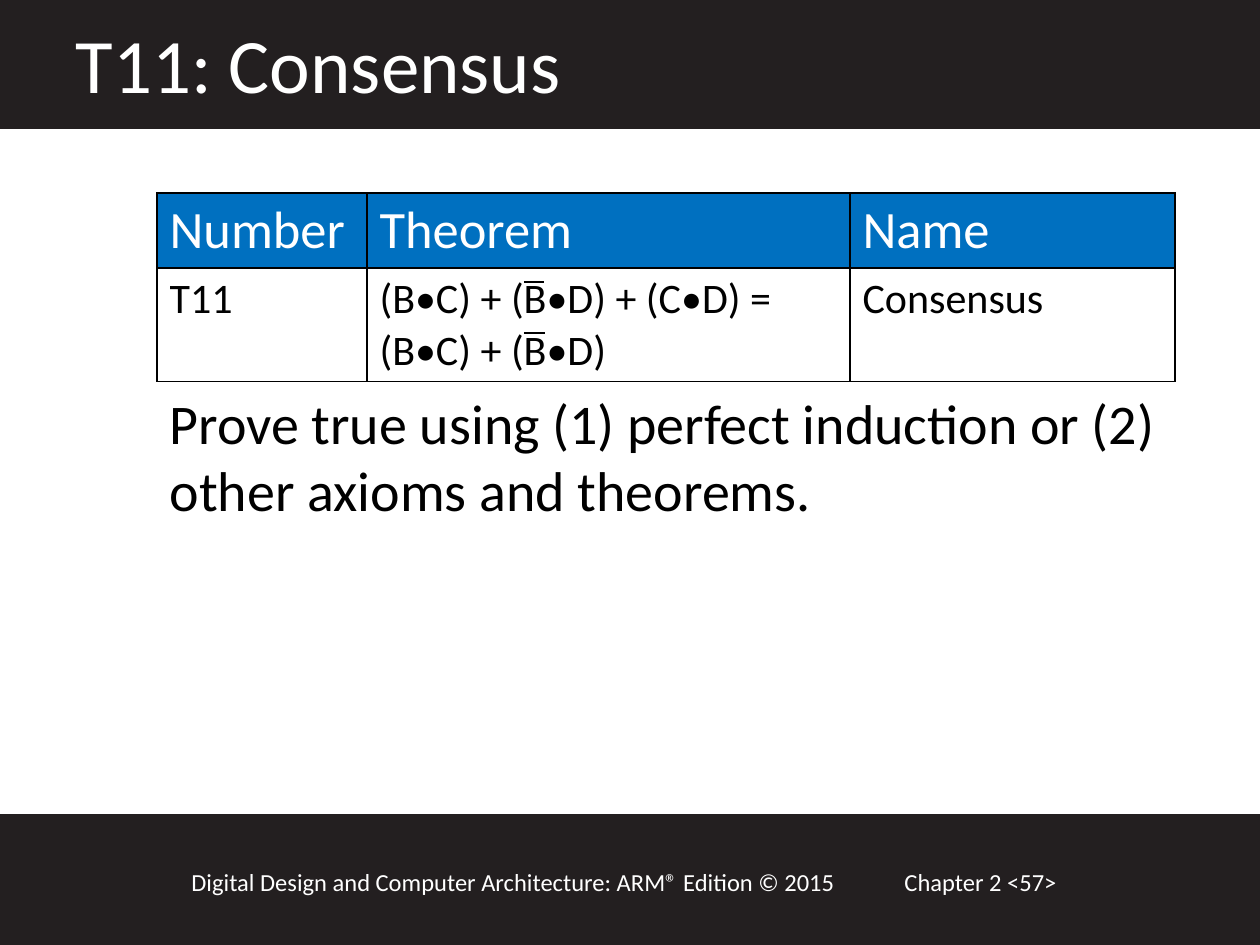
from dataclasses import dataclass

import lxml.etree
import pptx
import pptx.dml.color
import pptx.enum.shapes
import pptx.enum.text
import pptx.oxml.ns
import pptx.util

PX_PER_INCH = 126


@dataclass(frozen=True)
class Theme:
    font: str = "Calibri"
    bar: str = "231F20"
    header: str = "0070C0"
    light: str = "FFFFFF"
    dark: str = "000000"
    title_size: int = 44
    body_size: int = 32
    header_size: int = 30
    cell_size: int = 24
    footer_size: int = 14


@dataclass(frozen=True)
class Box:
    left: int
    top: int
    width: int
    height: int


@dataclass(frozen=True)
class Label:
    box: Box
    text: str


@dataclass(frozen=True)
class Overline:
    left: int
    right: int
    top: int


THEME = Theme()
BARS = [Box(0, 816, 1260, 129), Box(0, 0, 1260, 127)]
FOOTERS = [
    Label(Box(892, 861, 273, 43), "Chapter 2 <57>"),
    Label(Box(179, 861, 725, 43),
          "Digital Design and Computer Architecture: ARM® Edition © 2015"),
]
TITLE = Label(Box(63, 10, 1092, 106), "T11: Consensus")
BODY = Label(Box(157, 382, 1018, 447),
             "Prove true using (1) perfect induction or (2) other axioms and theorems.")
TABLE_BOX = Box(157, 193, 1018, 188)
COLUMN_WIDTHS = [210, 483, 325]
ROW_HEIGHTS = [75, 113]
TABLE_ROWS = [
    [["Number"], ["Theorem"], ["Name"]],
    [["T11"], ["(B•C) + (B•D) + (C•D) =", "(B•C) + (B•D)"], ["Consensus"]],
]
OVERLINES = [Overline(524, 544, 282), Overline(524, 545, 333)]


def px(length: int) -> pptx.util.Emu:
    return pptx.util.Emu(round(length * 914400 / PX_PER_INCH))


def rgb(color: str) -> pptx.dml.color.RGBColor:
    return pptx.dml.color.RGBColor.from_string(color)


def place(shape, box: Box) -> None:
    shape.left, shape.top = px(box.left), px(box.top)
    shape.width, shape.height = px(box.width), px(box.height)


def write(text_frame, lines: list[str], size: int, color: str) -> None:
    """Fill a frame with one left-aligned, unbulleted paragraph per line."""
    for index, line in enumerate(lines):
        paragraph = text_frame.add_paragraph() if index else text_frame.paragraphs[0]
        paragraph.alignment = pptx.enum.text.PP_ALIGN.LEFT
        paragraph.space_before = pptx.util.Pt(0)
        properties = paragraph._p.get_or_add_pPr()
        properties.set("marL", "0")
        properties.set("indent", "0")
        lxml.etree.SubElement(properties, pptx.oxml.ns.qn("a:buNone"))
        run = paragraph.add_run()
        run.text = line
        run.font.name = THEME.font
        run.font.size = pptx.util.Pt(size)
        run.font.color.rgb = rgb(color)


def write_label(shape, label: Label, size: int, color: str) -> None:
    place(shape, label.box)
    text_frame = shape.text_frame
    text_frame.word_wrap = True
    text_frame.auto_size = pptx.enum.text.MSO_AUTO_SIZE.NONE
    text_frame.vertical_anchor = pptx.enum.text.MSO_ANCHOR.TOP
    write(text_frame, [label.text], size, color)


def add_bar(slide, box: Box) -> None:
    bar = slide.shapes.add_shape(
        pptx.enum.shapes.MSO_SHAPE.RECTANGLE,
        px(box.left), px(box.top), px(box.width), px(box.height))
    bar.shadow.inherit = False
    bar.fill.solid()
    bar.fill.fore_color.rgb = rgb(THEME.bar)
    bar.line.color.rgb = rgb(THEME.bar)
    bar.line.width = pptx.util.Pt(2)


def add_borders(cell) -> None:
    properties = cell._tc.get_or_add_tcPr()
    for side in ("lnL", "lnR", "lnT", "lnB"):
        line = lxml.etree.SubElement(
            properties, pptx.oxml.ns.qn(f"a:{side}"), w=str(pptx.util.Pt(1)))
        fill = lxml.etree.SubElement(line, pptx.oxml.ns.qn("a:solidFill"))
        lxml.etree.SubElement(fill, pptx.oxml.ns.qn("a:srgbClr"), val=THEME.dark)


def add_theorem_table(slide) -> None:
    box = TABLE_BOX
    table = slide.shapes.add_table(
        len(ROW_HEIGHTS), len(COLUMN_WIDTHS),
        px(box.left), px(box.top), px(box.width), px(box.height)).table
    for column, width in zip(table.columns, COLUMN_WIDTHS):
        column.width = px(width)
    for row_index, height in enumerate(ROW_HEIGHTS):
        table.rows[row_index].height = px(height)
        if row_index == 0:
            fill, color, size = THEME.header, THEME.light, THEME.header_size
        else:
            fill, color, size = THEME.light, THEME.dark, THEME.cell_size
        for column_index, lines in enumerate(TABLE_ROWS[row_index]):
            cell = table.cell(row_index, column_index)
            add_borders(cell)
            cell.fill.solid()
            cell.fill.fore_color.rgb = rgb(fill)
            cell.margin_top, cell.margin_bottom = px(6), px(5)
            write(cell.text_frame, lines, size, color)
            for paragraph in cell.text_frame.paragraphs:
                paragraph.runs[0].font.bold = False


def add_overline(slide, overline: Overline) -> None:
    """Draw the complement bar above a variable."""
    connector = slide.shapes.add_connector(
        pptx.enum.shapes.MSO_CONNECTOR.STRAIGHT,
        px(overline.left), px(overline.top), px(overline.right), px(overline.top))
    connector.line.color.rgb = rgb(THEME.dark)
    connector.line.width = pptx.util.Pt(0.75)
    lxml.etree.SubElement(connector._element.spPr, pptx.oxml.ns.qn("a:effectLst"))


def main() -> None:
    presentation = pptx.Presentation()
    presentation.slide_width, presentation.slide_height = px(1260), px(945)
    slide = presentation.slides.add_slide(presentation.slide_layouts[1])
    title, body = slide.shapes.title, slide.placeholders[1]

    for bar in BARS:
        add_bar(slide, bar)
    for footer in FOOTERS:
        box = footer.box
        text_box = slide.shapes.add_textbox(
            px(box.left), px(box.top), px(box.width), px(box.height))
        write_label(text_box, footer, THEME.footer_size, THEME.light)

    shape_tree = title._element.getparent()
    shape_tree.append(title._element)  # in front of the header bar
    write_label(title, TITLE, THEME.title_size, THEME.light)
    add_theorem_table(slide)
    for overline in OVERLINES:
        add_overline(slide, overline)
    shape_tree.append(body._element)
    write_label(body, BODY, THEME.body_size, THEME.dark)

    presentation.save("out.pptx")


if __name__ == "__main__":
    main()
